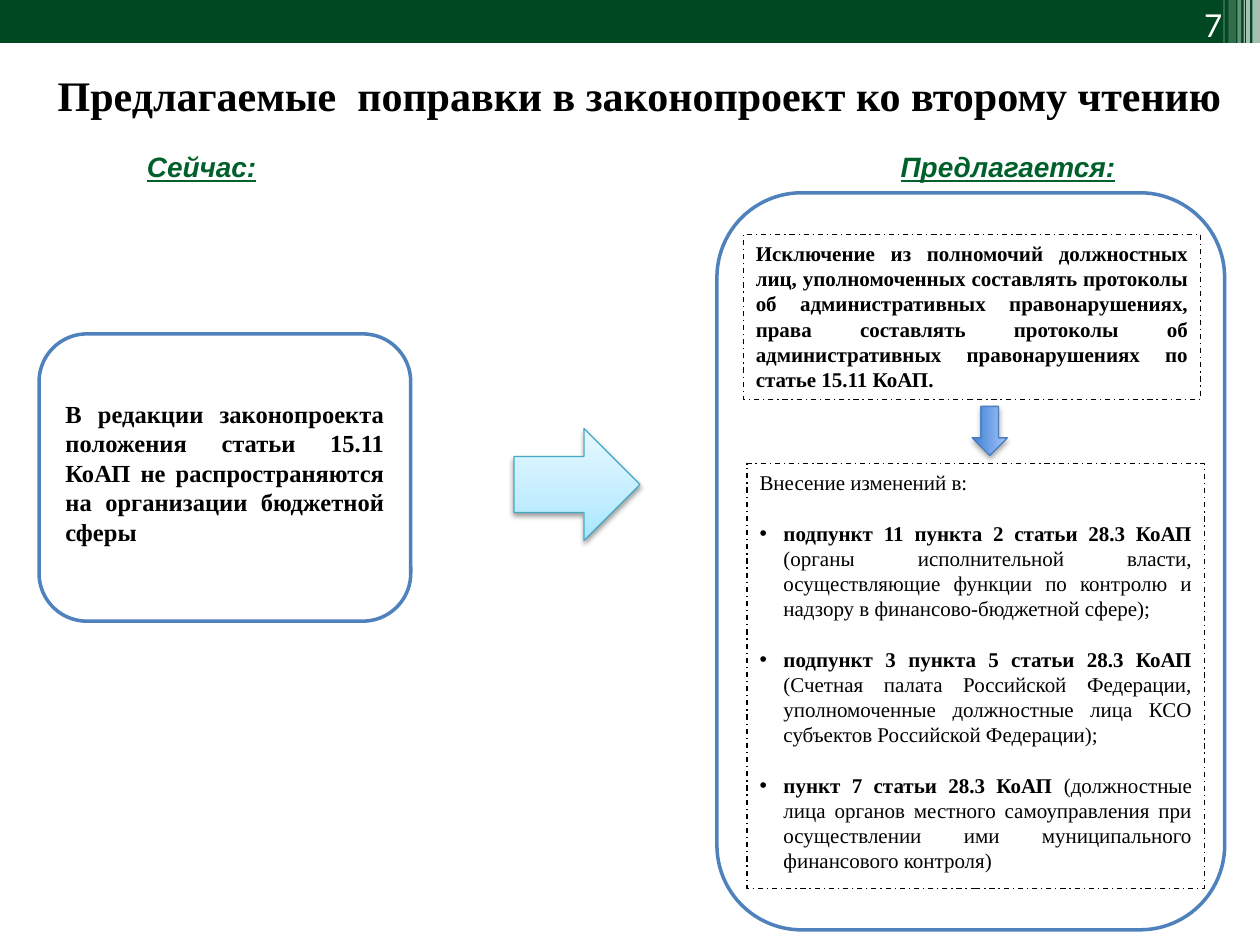
from lxml.etree import SubElement
from pptx import Presentation
from pptx.dml.color import RGBColor
from pptx.enum.dml import MSO_LINE
from pptx.enum.shapes import MSO_SHAPE
from pptx.enum.text import MSO_ANCHOR, PP_ALIGN
from pptx.oxml.ns import qn
from pptx.util import Inches, Pt

WHITE = RGBColor(0xFF, 0xFF, 0xFF)
BLACK = RGBColor(0x00, 0x00, 0x00)
BANNER_GREEN = RGBColor(0x00, 0x48, 0x21)
HEADING_GREEN = RGBColor(0x00, 0x60, 0x2B)
FRAME_BLUE = RGBColor(0x4F, 0x81, 0xBD)
CYAN_LINE = RGBColor(0x46, 0xAA, 0xC5)
BLUE_LINE = RGBColor(0x4B, 0x7E, 0xBC)
CYAN_STOPS = [
    (0, RGBColor(0xA7, 0xE6, 0xFF)),
    (35, RGBColor(0xC1, 0xED, 0xFF)),
    (100, RGBColor(0xE7, 0xF8, 0xFF)),
]
BLUE_STOPS = [
    (0, RGBColor(0x3F, 0x80, 0xCE)),
    (100, RGBColor(0xA4, 0xC4, 0xFF)),
]
SERIF = "Times New Roman"

BANNER_STRIPES = [
    (9.94, 0.06, 0.34, 65),
    (9.89, 0.03, 0.34, 65),
    (9.87, 0.01, 0.34, 60),
    (9.82, 0.03, 0.34, 40),
    (9.75, 0.06, 0.36, 20),
    (9.71, 0.01, 0.36, 30),
]
AMENDMENTS = [
    ("подпункт 11 пункта 2 статьи 28.3 КоАП ",
     "(органы исполнительной власти, осуществляющие функции по контролю "
     "и надзору в финансово-бюджетной сфере);"),
    ("подпункт 3 пункта 5 статьи 28.3 КоАП ",
     "(Счетная палата Российской Федерации, уполномоченные должностные лица "
     "КСО субъектов Российской Федерации);"),
    ("пункт 7 статьи 28.3 КоАП",
     " (должностные лица органов местного самоуправления при осуществлении "
     "ими муниципального финансового контроля)"),
]


def add_text(paragraph, text, font=SERIF, size=12, color=BLACK, bold=False,
             italic=False, underline=False, align=PP_ALIGN.JUSTIFY):
    paragraph.alignment = align
    run = paragraph.add_run()
    run.text = text
    run.font.name = font
    run.font.size = Pt(size)
    run.font.color.rgb = color
    run.font.bold = bold
    run.font.italic = italic
    run.font.underline = underline


def add_bullet(paragraph, indent=0.19):
    properties = paragraph._p.get_or_add_pPr()
    properties.set("marL", str(Inches(indent)))
    properties.set("indent", str(-Inches(indent)))
    SubElement(properties, qn("a:buFont"), typeface="Arial")
    SubElement(properties, qn("a:buChar"), char="•")


class SlideBuilder:
    frame_width = 2
    thin_width = 0.75

    def __init__(self, slide):
        self.slide = slide

    def shape(self, kind, left, top, width, height, fill=None, line=None,
              line_width=thin_width):
        shape = self.slide.shapes.add_shape(
            kind, Inches(left), Inches(top), Inches(width), Inches(height))
        shape.shadow.inherit = False
        if fill is None:
            shape.fill.background()
        else:
            shape.fill.solid()
            shape.fill.fore_color.rgb = fill
        if line is None:
            shape.line.fill.background()
        else:
            shape.line.color.rgb = line
            shape.line.width = Pt(line_width)
        return shape

    def stripe(self, left, width, height, opacity):
        stripe = self.shape(MSO_SHAPE.RECTANGLE, left, 0, width, height, WHITE)
        color = stripe._element.spPr.find(".//" + qn("a:srgbClr"))
        SubElement(color, qn("a:alpha"), val=str(opacity * 1000))

    def frame(self, left, top, width, height):
        return self.shape(MSO_SHAPE.ROUNDED_RECTANGLE, left, top, width, height,
                          WHITE, FRAME_BLUE, self.frame_width)

    def dashed_box(self, left, top, width, height):
        box = self.shape(MSO_SHAPE.RECTANGLE, left, top, width, height, line=BLACK)
        box.line.dash_style = MSO_LINE.DASH_DOT
        box.text_frame.word_wrap = True
        box.text_frame.vertical_anchor = MSO_ANCHOR.TOP
        return box.text_frame

    def arrow(self, left, top, width, height, stops, line, opacity, distance,
              rotation=0):
        arrow = self.shape(MSO_SHAPE.RIGHT_ARROW, left, top, width, height, line=line)
        arrow.rotation = rotation
        arrow.fill.gradient()
        arrow.fill.gradient_angle = 90
        properties = arrow._element.spPr
        stop_list = properties.find(".//" + qn("a:gsLst"))
        stop_list.clear()
        for position, color in stops:
            stop = SubElement(stop_list, qn("a:gs"), pos=str(position * 1000))
            SubElement(stop, qn("a:srgbClr"), val=str(color))
        shadow = SubElement(properties.find(qn("a:effectLst")), qn("a:outerShdw"),
                            blurRad=str(Pt(3.1)), dist=str(Pt(distance)),
                            dir="5400000", rotWithShape="0")
        color = SubElement(shadow, qn("a:srgbClr"), val=str(BLACK))
        SubElement(color, qn("a:alpha"), val=str(opacity * 1000))

    def label(self, left, top, width, height, text, wrap=True, **style):
        box = self.slide.shapes.add_textbox(
            Inches(left), Inches(top), Inches(width), Inches(height))
        box.text_frame.word_wrap = wrap
        add_text(box.text_frame.paragraphs[0], text, **style)


def main():
    presentation = Presentation()
    presentation.slide_width = Inches(10)
    presentation.slide_height = Inches(7.5)
    builder = SlideBuilder(presentation.slides.add_slide(presentation.slide_layouts[6]))

    builder.shape(MSO_SHAPE.RECTANGLE, 0, 0, 10, 0.34, BANNER_GREEN)
    for stripe in BANNER_STRIPES:
        builder.stripe(*stripe)
    builder.label(8.9, 0, 0.9, 0.37, "7", font="Lato", size=18, color=WHITE,
                  align=PP_ALIGN.RIGHT)

    builder.arrow(4.08, 3.4, 1, 0.89, CYAN_STOPS, CYAN_LINE, 38, 1.6)
    builder.frame(5.69, 1.53, 4.03, 5.85)
    current = builder.frame(0.31, 2.65, 2.95, 2.28).text_frame
    current.word_wrap = True
    current.vertical_anchor = MSO_ANCHOR.MIDDLE
    current.margin_bottom = Inches(0.13)
    add_text(current.paragraphs[0],
             "В редакции законопроекта положения статьи 15.11 КоАП "
             "не распространяются на организации бюджетной сферы",
             size=14, bold=True)

    builder.label(0.31, 0.5, 9.53, 0.5,
                  "Предлагаемые  поправки в законопроект ко второму чтению",
                  size=24, bold=True, align=PP_ALIGN.CENTER)
    heading = dict(font="Arial", size=16, color=HEADING_GREEN, bold=True,
                   italic=True, underline=True)
    builder.label(1.06, 1.14, 1.08, 0.37, "Сейчас:", wrap=False,
                  align=PP_ALIGN.CENTER, **heading)
    builder.label(7.05, 1.14, 2.05, 0.37, "Предлагается:",
                  align=PP_ALIGN.LEFT, **heading)

    exclusion = builder.dashed_box(5.9, 1.86, 3.63, 1.31)
    add_text(exclusion.paragraphs[0],
             "Исключение из полномочий должностных лиц, уполномоченных составлять "
             "протоколы об административных правонарушениях, права составлять "
             "протоколы об административных правонарушениях по статье 15.11 КоАП.",
             bold=True)

    builder.arrow(7.66, 3.28, 0.39, 0.28, BLUE_STOPS, BLUE_LINE, 35, 1.8, rotation=90)

    changes = builder.dashed_box(5.93, 3.68, 3.63, 3.37)
    add_text(changes.paragraphs[0], "Внесение изменений в:")
    for provision, authority in AMENDMENTS:
        paragraph = changes.add_paragraph()
        add_bullet(paragraph)
        paragraph.space_before = Pt(14.4)
        add_text(paragraph, provision, bold=True)
        add_text(paragraph, authority)

    presentation.save("out.pptx")


if __name__ == "__main__":
    main()
